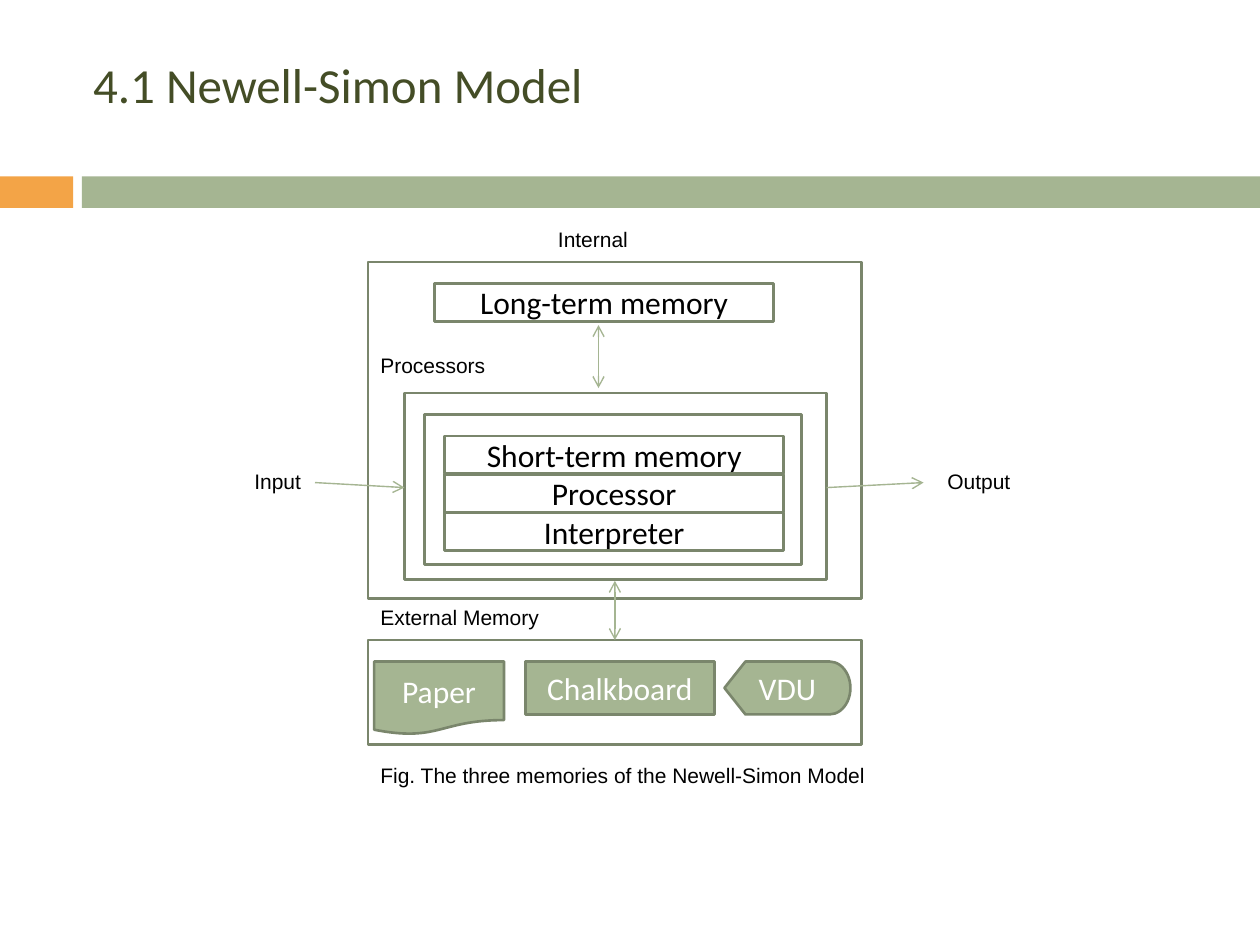
from lxml import etree
from pptx import Presentation
from pptx.dml.color import RGBColor
from pptx.enum import shapes, text
from pptx.oxml import ns
from pptx.util import Inches, Pt

ORANGE = RGBColor(0xF3, 0xA4, 0x47)
SAGE = RGBColor(0xA5, 0xB5, 0x92)
OUTLINE = RGBColor(0x7A, 0x86, 0x6C)
OLIVE = RGBColor(0x44, 0x4D, 0x26)
BLACK = RGBColor(0, 0, 0)
WHITE = RGBColor(0xFF, 0xFF, 0xFF)
KIND = shapes.MSO_SHAPE

TITLE = "4.1 Newell-Simon Model"
BANDS = [(0, 0.58, ORANGE), (0.65, 9.35, SAGE)]  # left, width, colour

FRAMES = [  # left, top, width, height
    (2.92, 2.08, 3.92, 2.67),  # internal
    (3.21, 3.12, 3.35, 1.48),  # processors
    (3.37, 3.29, 2.99, 1.19),
    (2.92, 5.08, 3.92, 0.83),  # external memory
]
UNIT_SIZE = (2.69, 0.3)
LONG_TERM = ("Long-term memory", 3.45, 2.25)
STACK = ["Short-term memory", "Processor", "Interpreter"]
STACK_LEFT, STACK_TOP, STACK_STEP = 3.53, 3.46, 0.305

MEDIA_TOP = 5.25
MEDIA = [  # name, kind, left, width, height
    ("Paper", KIND.FLOWCHART_DOCUMENT, 2.97, 1.03, 0.58),
    ("Chalkboard", KIND.RECTANGLE, 4.17, 1.5, 0.42),
    ("VDU", KIND.FLOWCHART_DISPLAY, 5.75, 1, 0.42),
]
CAPTIONS = [  # wording, left, top, width
    ("Internal", 4.33, 1.75, 1.08),
    ("Processors", 2.92, 2.75, 1.29),
    ("Input", 1.92, 3.67, 0.75),
    ("Output", 7.42, 3.67, 0.75),
    ("External Memory", 2.92, 4.75, 1.58),
    ("Fig. The three memories of the Newell-Simon Model", 2.92, 6, 4.08),
]
ARROWS = [  # start, end, whether it points both ways
    ((4.75, 2.58), (4.75, 3.08), True),
    ((2.5, 3.83), (3.21, 3.87), False),
    ((6.56, 3.87), (7.33, 3.83), False),
    ((4.88, 4.61), (4.88, 5.08), True),
]


def write(shape, wording, size, font, colour, align=None):
    frame = shape.text_frame
    frame.word_wrap = True
    paragraph = frame.paragraphs[0]
    paragraph.alignment = align
    run = paragraph.add_run()
    run.text = wording
    run.font.size = Pt(size)
    run.font.name = font
    run.font.color.rgb = colour


def add_box(slide, area, kind=KIND.RECTANGLE, fill=None, outline=OUTLINE,
            label=None, colour=BLACK):
    box = slide.shapes.add_shape(kind, *map(Inches, area))
    box.shadow.inherit = False
    if fill is None:
        box.fill.background()
    else:
        box.fill.solid()
        box.fill.fore_color.rgb = fill
    if outline is None:
        box.line.fill.background()
    else:
        box.line.color.rgb = outline
        box.line.width = Pt(1.5)
    if label:
        box.text_frame.vertical_anchor = text.MSO_ANCHOR.MIDDLE
        write(box, label, 18, "Calibri", colour, text.PP_ALIGN.CENTER)


def add_caption(slide, wording, left, top, width):
    caption = slide.shapes.add_textbox(*map(Inches, (left, top, width, 0.3)))
    write(caption, wording, 12, "Arial", BLACK)
    caption.text_frame.auto_size = text.MSO_AUTO_SIZE.SHAPE_TO_FIT_TEXT


def add_arrow(slide, start, end, both_ways):
    arrow = slide.shapes.add_connector(
        shapes.MSO_CONNECTOR.STRAIGHT, *map(Inches, start + end))
    arrow.line.color.rgb = SAGE
    arrow.line.width = Pt(0.79)
    line = arrow.line._get_or_add_ln()
    for tag in ["a:headEnd", "a:tailEnd"] if both_ways else ["a:tailEnd"]:
        etree.SubElement(line, ns.qn(tag), type="arrow")
    etree.SubElement(arrow._element.spPr, ns.qn("a:effectLst"))


def main():
    deck = Presentation()
    deck.slide_width, deck.slide_height = Inches(10), Inches(7.5)
    slide = deck.slides.add_slide(deck.slide_layouts[6])

    for left, width, colour in BANDS:
        add_box(slide, (left, 1.4, width, 0.25), fill=colour, outline=None)
    title = slide.shapes.add_textbox(*map(Inches, (0.64, 0.25, 8.92, 0.83)))
    title.text_frame.vertical_anchor = text.MSO_ANCHOR.MIDDLE
    write(title, TITLE, 28, "Calibri", OLIVE)

    for area in FRAMES:
        add_box(slide, area)
    units = [LONG_TERM] + [(name, STACK_LEFT, STACK_TOP + row * STACK_STEP)
                           for row, name in enumerate(STACK)]
    for name, left, top in units:
        add_box(slide, (left, top, *UNIT_SIZE), label=name)
    for name, kind, left, width, height in MEDIA:
        add_box(slide, (left, MEDIA_TOP, width, height), kind, SAGE,
                label=name, colour=WHITE)
    for caption in CAPTIONS:
        add_caption(slide, *caption)
    for arrow in ARROWS:
        add_arrow(slide, *arrow)
    deck.save("out.pptx")


if __name__ == "__main__":
    main()
